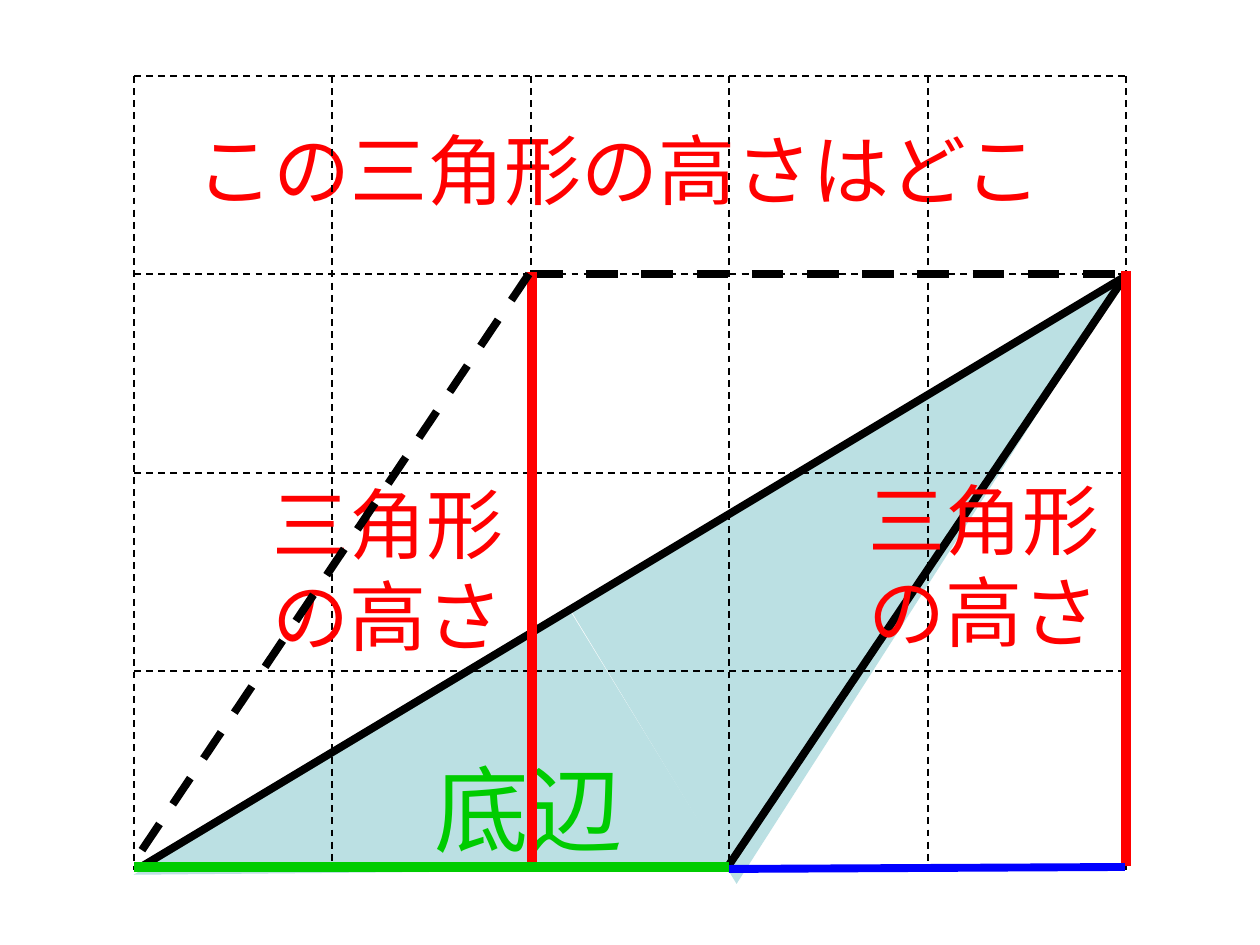
"""Build a slide that asks for the height of an obtuse triangle on a grid."""
from dataclasses import dataclass

from lxml import etree
from pptx import Presentation
from pptx.dml.color import RGBColor
from pptx.enum.dml import MSO_LINE
from pptx.enum.shapes import MSO_CONNECTOR, MSO_SHAPE
from pptx.enum.text import MSO_ANCHOR, MSO_AUTO_SIZE, PP_ALIGN
from pptx.oxml.ns import qn
from pptx.util import Pt

EMU_PER_PX = 914400 / 126
FONT = "Noto Sans CJK JP"
BLACK = RGBColor(0x00, 0x00, 0x00)
RED = RGBColor(0xFF, 0x00, 0x00)
GREEN = RGBColor(0x00, 0xCC, 0x00)
BLUE = RGBColor(0x00, 0x00, 0xFF)
PALE_TEAL = RGBColor(0xBB, 0xE0, 0xE3)
STRAIGHT = MSO_CONNECTOR.STRAIGHT
RIGHT_TRIANGLE = MSO_SHAPE.RIGHT_TRIANGLE
DASH = MSO_LINE.DASH
TOP = MSO_ANCHOR.TOP
LEFT = PP_ALIGN.LEFT
NO_AUTO_SIZE = MSO_AUTO_SIZE.NONE
TITLE_ONLY = 5

GRID_LEFT, GRID_TOP, GRID_CELL = 134, 76, 198.4
GRID_COLUMNS, GRID_ROWS = 5, 4


@dataclass(frozen=True)
class Box:
    left: int
    top: int
    width: int
    height: int


@dataclass(frozen=True)
class Line:
    start: tuple[int, int]
    end: tuple[int, int]
    color: RGBColor = BLACK
    weight: float = 4.5
    dashed: bool = False


@dataclass(frozen=True)
class Triangle:
    box: Box
    rotation: float
    flipped: bool = False


@dataclass(frozen=True)
class Label:
    box: Box
    text: str
    size: int = 44
    color: RGBColor = RED


TITLE = Label(Box(184, 116, 893, 106), "この三角形の高さはどこ")
TRIANGLES = [
    Triangle(Box(176, 719, 510, 306), 148.5),
    Triangle(Box(607, 420, 649, 319), 328.8, flipped=True),
]
FIGURE = [
    Line((1126, 276), (141, 867)),
    Label(Box(422, 745, 248, 126), "底辺", size=54, color=GREEN),
    Line((531, 274), (1123, 274), dashed=True),
    Line((1126, 275), (729, 865)),
    Line((532, 272), (532, 867), RED, 6),
    Label(Box(856, 466, 272, 199), "三角形\nの高さ"),
    Line((1126, 271), (1126, 866), RED, 6),
    Label(Box(260, 470, 277, 199), "三角形\nの高さ"),
    Line((729, 869), (1125, 867), BLUE),
    Line((134, 867), (729, 867), GREEN, 6),
    Line((529, 274), (132, 865), dashed=True),
]


def px(length: float) -> int:
    """Turn pixels into EMU."""
    return round(length * EMU_PER_PX)


def frame(box: Box) -> tuple[int, int, int, int]:
    """Give the box in EMU."""
    return px(box.left), px(box.top), px(box.width), px(box.height)


def write_text(shape, text: str, *, size: int, color: RGBColor) -> None:
    """Write the text, one paragraph a line, in one format."""
    text_frame = shape.text_frame
    text_frame.text = text
    text_frame.word_wrap = True
    text_frame.auto_size = NO_AUTO_SIZE
    text_frame.vertical_anchor = TOP
    for paragraph in text_frame.paragraphs:
        paragraph.alignment = LEFT
        font = paragraph.runs[0].font
        font.size = Pt(size)
        font.color.rgb = color
        font.name = FONT
        properties = paragraph.runs[0]._r.get_or_add_rPr()
        etree.SubElement(properties, qn("a:ea"), typeface=FONT)


def draw_title(slide, label: Label) -> None:
    """Place and format the title placeholder."""
    title = slide.shapes.title
    title.left, title.top, title.width, title.height = frame(label.box)
    write_text(title, label.text, size=label.size, color=label.color)


def draw_label(slide, label: Label) -> None:
    """Draw a text box."""
    shape = slide.shapes.add_textbox(*frame(label.box))
    write_text(shape, label.text, size=label.size, color=label.color)


def draw_triangle(slide, triangle: Triangle) -> None:
    """Draw a filled right triangle without an outline."""
    shape = slide.shapes.add_shape(RIGHT_TRIANGLE, *frame(triangle.box))
    shape.shadow.inherit = False
    shape.fill.solid()
    shape.fill.fore_color.rgb = PALE_TEAL
    shape.line.fill.background()
    shape.rotation = triangle.rotation
    if triangle.flipped:
        shape._element.spPr.find(qn("a:xfrm")).set("flipV", "1")


def draw_line(slide, line: Line) -> None:
    """Draw a straight line without a shadow."""
    points = [px(value) for value in (*line.start, *line.end)]
    connector = slide.shapes.add_connector(STRAIGHT, *points)
    connector.line.color.rgb = line.color
    connector.line.width = Pt(line.weight)
    if line.dashed:
        connector.line.dash_style = DASH
    etree.SubElement(connector._element.spPr, qn("a:effectLst"))


def grid_lines() -> list[Line]:
    """Work out the dashed grid."""
    columns = [round(GRID_LEFT + GRID_CELL * i) for i in range(GRID_COLUMNS + 1)]
    rows = [round(GRID_TOP + GRID_CELL * i) for i in range(GRID_ROWS + 1)]
    ends = [((columns[0], y), (columns[-1], y)) for y in rows]
    ends += [((x, rows[0]), (x, rows[-1])) for x in columns]
    return [Line(start, end, weight=1, dashed=True) for start, end in ends]


def main() -> None:
    """Build and save the presentation."""
    presentation = Presentation()
    presentation.slide_width, presentation.slide_height = px(1260), px(945)
    slide = presentation.slides.add_slide(presentation.slide_layouts[TITLE_ONLY])
    draw_title(slide, TITLE)
    for triangle in TRIANGLES:
        draw_triangle(slide, triangle)
    for item in grid_lines() + FIGURE:
        if isinstance(item, Line):
            draw_line(slide, item)
        else:
            draw_label(slide, item)
    presentation.save("out.pptx")


if __name__ == "__main__":
    main()
